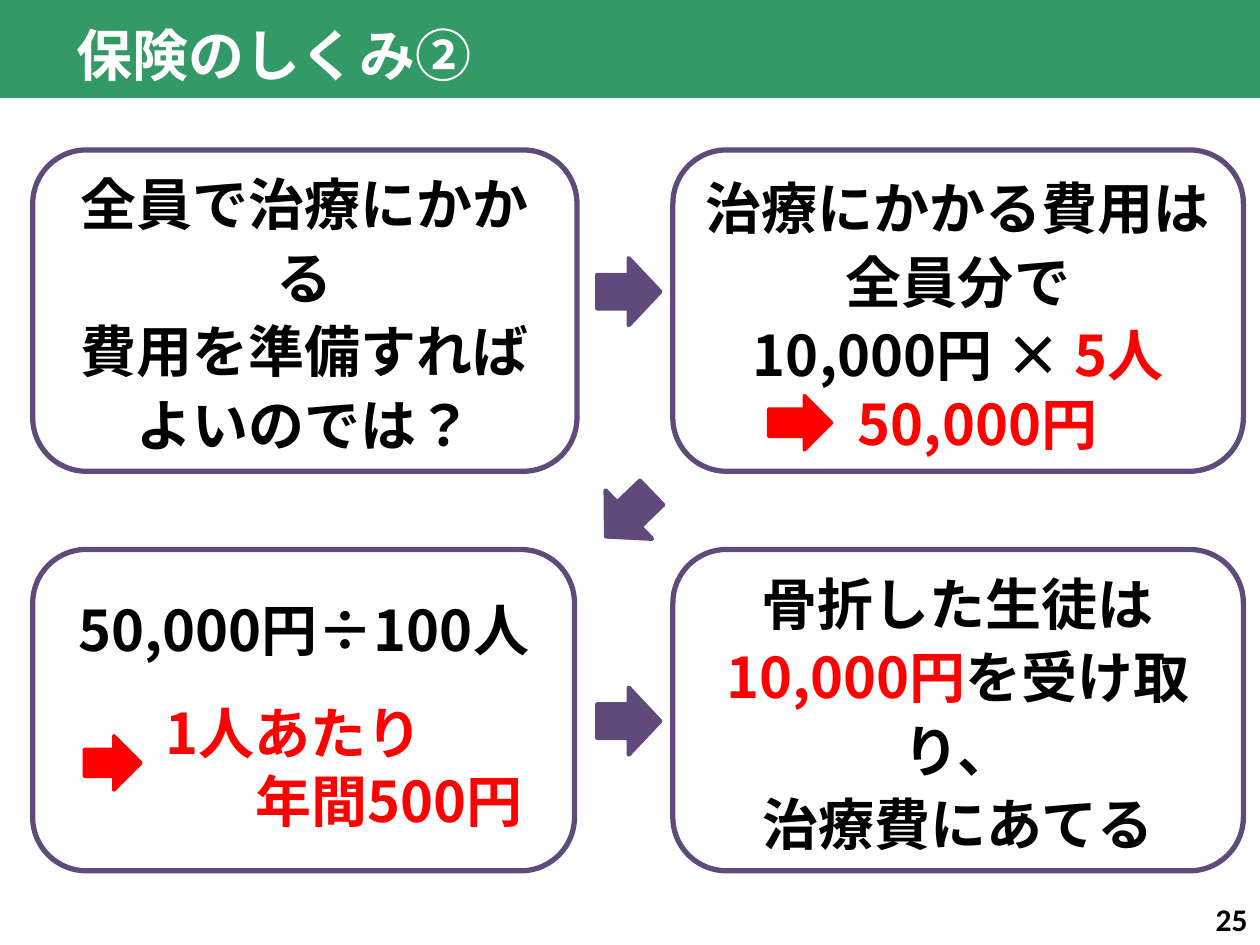
from dataclasses import dataclass
from lxml import etree
from pptx import Presentation
from pptx.dml.color import RGBColor
from pptx.enum.lang import MSO_LANGUAGE_ID
from pptx.enum.shapes import MSO_SHAPE
from pptx.enum.text import MSO_ANCHOR, PP_ALIGN
from pptx.oxml.ns import qn
from pptx.util import Pt

RECT, ROUND, ARROW = MSO_SHAPE.RECTANGLE, MSO_SHAPE.ROUNDED_RECTANGLE, MSO_SHAPE.RIGHT_ARROW
LEFT, MID, RIGHT = PP_ALIGN.LEFT, PP_ALIGN.CENTER, PP_ALIGN.RIGHT
TOP, CENTER = MSO_ANCHOR.TOP, MSO_ANCHOR.MIDDLE
JAPAN = MSO_LANGUAGE_ID.JAPANESE


@dataclass(frozen=True)
class Theme:
    green: str = "339966"
    purple: str = "604A7B"
    red: str = "FF0000"
    white: str = "FFFFFF"
    black: str = "000000"
    font: str = "Noto Sans CJK JP"
    digit: str = "Calibri"
    size: int = 32
    small: int = 18
    wide: int = 42
    tight: int = 39


T = Theme()


def rgb(code):
    return RGBColor.from_string(code)


def place(box):
    return [Pt(n) for n in box]


def style(run, color, size=T.size, name=T.font):
    look = {"name": name, "size": Pt(size), "bold": True, "language_id": JAPAN}
    for key, value in look.items():
        setattr(run.font, key, value)
    run.font.color.rgb = rgb(color)
    east = etree.SubElement(run._r.get_or_add_rPr(), qn("a:ea"))
    east.set("typeface", name)


def write(frame, lines, pitch=None, **look):
    form = {"word_wrap": True, "vertical_anchor": CENTER, **look}
    for key, value in form.items():
        setattr(frame, key, value)
    for i, (align, runs) in enumerate(lines):
        para = frame.add_paragraph() if i else frame.paragraphs[0]
        para.alignment = align
        if pitch:
            para.line_spacing = Pt(pitch)
        for text, *kind in runs:
            run = para.add_run()
            run.text = text
            style(run, *kind)


def shape(slide, kind, box, fill, line=None, width=0):
    item = slide.shapes.add_shape(kind, *place(box))
    item.shadow.inherit = False
    item.fill.solid()
    item.fill.fore_color.rgb = rgb(fill)
    if line:
        item.line.color.rgb = rgb(line)
        item.line.width = Pt(width)
    else:
        item.line.fill.background()
    return item


def header(slide, box, text):
    x, y, w, h = box
    band = shape(slide, RECT, box, T.green)
    slide.shapes._spTree.insert(2, band._element)
    title = slide.shapes.title
    spot = place((x + 36.7, y + 2.2, 460, 57))
    for key, value in zip(("left", "top", "width", "height"), spot):
        setattr(title, key, value)
    write(title.text_frame, [(LEFT, [(text, T.white)])])


def card(slide, box, lines, base=3.6, pitch=T.wide):
    item = shape(slide, ROUND, box, T.white, T.purple, 3)
    rows = [(MID, runs) for runs in lines]
    write(item.text_frame, rows, pitch, margin_bottom=Pt(base))


def result(slide, box, arrow, label, lines):
    x, y = box[:2]
    dx, dy, w, h = arrow
    shape(slide, ARROW, (x + dx, y + dy, w, h), T.red, T.red, 2)
    dx, dy, w, h = label
    note = slide.shapes.add_textbox(*place((x + dx, y + dy, w, h)))
    rows = [(align, [(text, T.red)]) for align, text in lines]
    write(note.text_frame, rows, T.tight, vertical_anchor=TOP)


def flow(slide, box, turn=0):
    item = shape(slide, ARROW, box, T.purple, T.purple, 2.5)
    item.rotation = turn


def number(slide, box, text):
    note = slide.shapes.add_textbox(*place(box))
    write(note.text_frame, [(RIGHT, [(text, T.black, T.small, T.digit)])])


def main():
    deck = Presentation()
    deck.slide_width, deck.slide_height = Pt(720), Pt(540)
    slide = deck.slides.add_slide(deck.slide_layouts[5])
    header(slide, (0, 0, 720, 56), "保険のしくみ②")

    high, low, tall = 85.7, 314, 183.6
    ask = (18.7, high, 311, tall)
    cost = (384.5, high, 326, tall)
    share = (18.7, low, 309.6, tall)
    pay = (384.5, low, 326, tall)

    card(slide, ask, [
        [("全員で治療にかかる", T.black)],
        [("費用を準備すれば", T.black)],
        [("よいのでは？", T.black)],
    ])
    card(slide, cost, [
        [("治療にかかる費用は", T.black)],
        [("全員分で", T.black)],
        [("10,000円 × ", T.black), ("5人", T.red)],
    ], 41)
    card(slide, share, [[("50,000円÷100人", T.black)]], 97, T.tight)
    card(slide, pay, [
        [("骨折した生徒は", T.black)],
        [("10,000円", T.red), ("を受け取り、", T.black)],
        [("治療費にあてる", T.black)],
    ])

    result(slide, cost, (54.7, 140.4, 36, 31), (90.7, 133, 167, 46),
           [(MID, "50,000円")])
    result(slide, share, (29.5, 106.5, 32.4, 31), (69, 81, 218, 85),
           [(LEFT, "1人あたり"), (RIGHT, "年間500円")])

    for top, turn in ((147.6, 0), (275, 136.1), (393, 0)):
        flow(slide, (341.3, top, 36, 38.2), turn)
    number(slide, (558, 510.5, 162, 28.8), "25")
    deck.save("out.pptx")


if __name__ == "__main__":
    main()
